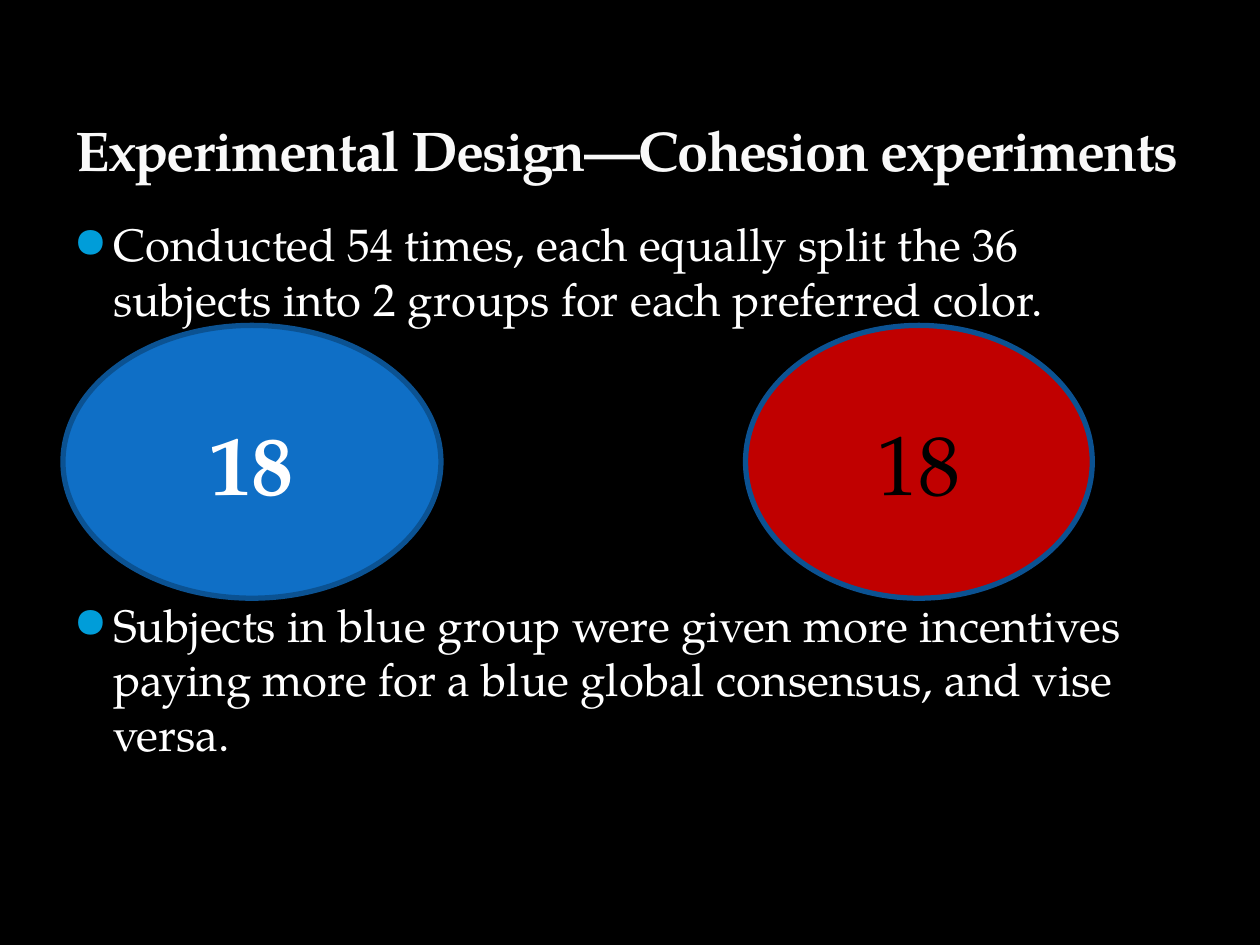
from lxml.etree import SubElement
from pptx import Presentation
from pptx.dml.color import RGBColor
from pptx.enum.shapes import MSO_SHAPE as Shape
from pptx.enum.text import MSO_ANCHOR as Anchor, PP_ALIGN as Align
from pptx.oxml import parse_xml
from pptx.oxml.ns import nsdecls, qn
from pptx.util import Cm, Pt

FONT = "TeX Gyre Pagella"
BLACK = RGBColor(0x00, 0x00, 0x00)
WHITE = RGBColor(0xFF, 0xFF, 0xFF)
TITLE_WHITE = RGBColor(0xF9, 0xF9, 0xF9)
TITLE_EDGE = RGBColor(0x04, 0x56, 0x6D)
BULLET_BLUE = RGBColor(0x00, 0x9D, 0xD9)
GROUP_BLUE = RGBColor(0x0F, 0x6F, 0xC6)
GROUP_RED = RGBColor(0xC0, 0x00, 0x00)
GROUP_EDGE = RGBColor(0x0B, 0x52, 0x92)

MARGIN = Cm(1.27)
CONTENT_WIDTH = Cm(22.86)
# Each statement with the space above it; the second leaves room for the groups.
STATEMENTS = [
    ("Conducted 54 times, each equally split the 36 subjects into 2 groups "
     "for each preferred color.", Pt(6)),
    ("Subjects in blue group were given more incentives paying more for a "
     "blue global consensus, and vise versa.", Pt(155)),
]


def format_runs(paragraph, size, color, bold=False):
    for run in paragraph.runs:
        run.font.name = FONT
        run.font.size = Pt(size)
        run.font.color.rgb = color
        run.font.bold = bold


def add_bullet(paragraph):
    props = paragraph._p.get_or_add_pPr()
    props.set("marL", str(Cm(0.76)))
    props.set("indent", str(-Cm(0.76)))
    color = SubElement(props, qn("a:buClr"))
    SubElement(color, qn("a:srgbClr"), val=str(BULLET_BLUE))
    SubElement(props, qn("a:buSzPct"), val="85000")
    SubElement(props, qn("a:buFont"), typeface=FONT)
    SubElement(props, qn("a:buChar"), char="●")


def place_title(slide, left, top, width, height):
    title = slide.shapes.title
    title.left, title.top, title.width, title.height = left, top, width, height
    frame = title.text_frame
    frame.text = "Experimental Design—Cohesion experiments"
    frame.vertical_anchor = Anchor.BOTTOM
    heading = frame.paragraphs[0]
    heading.alignment = Align.LEFT
    format_runs(heading, 32, TITLE_WHITE, bold=True)
    run_props = heading.runs[0]._r.get_or_add_rPr()
    run_props.set("spc", "-100")
    run_props.insert(0, parse_xml(
        f'<a:ln {nsdecls("a")} w="{Pt(0.25)}"><a:solidFill>'
        f'<a:srgbClr val="{TITLE_EDGE}"><a:alpha val="25000"/></a:srgbClr>'
        '</a:solidFill></a:ln>'))


def add_statements(slide, left, top, width, height):
    frame = slide.shapes.add_textbox(left, top, width, height).text_frame
    frame.word_wrap = True
    for index, (statement, space_above) in enumerate(STATEMENTS):
        paragraph = frame.add_paragraph() if index else frame.paragraphs[0]
        paragraph.text = statement
        paragraph.space_before = space_above
        format_runs(paragraph, 26, WHITE)
        add_bullet(paragraph)


def add_group(slide, left, top, width, height, fill, text_color, bold):
    """Add an ellipse showing the number of subjects in one color group."""
    group = slide.shapes.add_shape(Shape.OVAL, left, top, width, height)
    group.shadow.inherit = False
    group.fill.solid()
    group.fill.fore_color.rgb = fill
    group.line.color.rgb = GROUP_EDGE
    group.line.width = Pt(3)
    frame = group.text_frame
    frame.text = "18"
    frame.vertical_anchor = Anchor.MIDDLE
    frame.paragraphs[0].alignment = Align.CENTER
    format_runs(frame.paragraphs[0], 48, text_color, bold)


def main():
    deck = Presentation()
    deck.slide_width, deck.slide_height = Cm(25.4), Cm(19.05)
    slide = deck.slides.add_slide(deck.slide_layouts[5])
    slide.background.fill.solid()
    slide.background.fill.fore_color.rgb = BLACK

    place_title(slide, MARGIN, Cm(0.43), CONTENT_WIDTH, Cm(3.38))
    add_statements(slide, MARGIN, Cm(4.24), CONTENT_WIDTH, Cm(12.7))
    groups_top, groups_height = Cm(6.56), Cm(5.5)
    add_group(slide, MARGIN, groups_top, Cm(7.62), groups_height,
              GROUP_BLUE, WHITE, bold=True)
    add_group(slide, Cm(15.03), groups_top, Cm(6.99), groups_height,
              GROUP_RED, BLACK, bold=False)
    deck.save("out.pptx")


if __name__ == "__main__":
    main()
